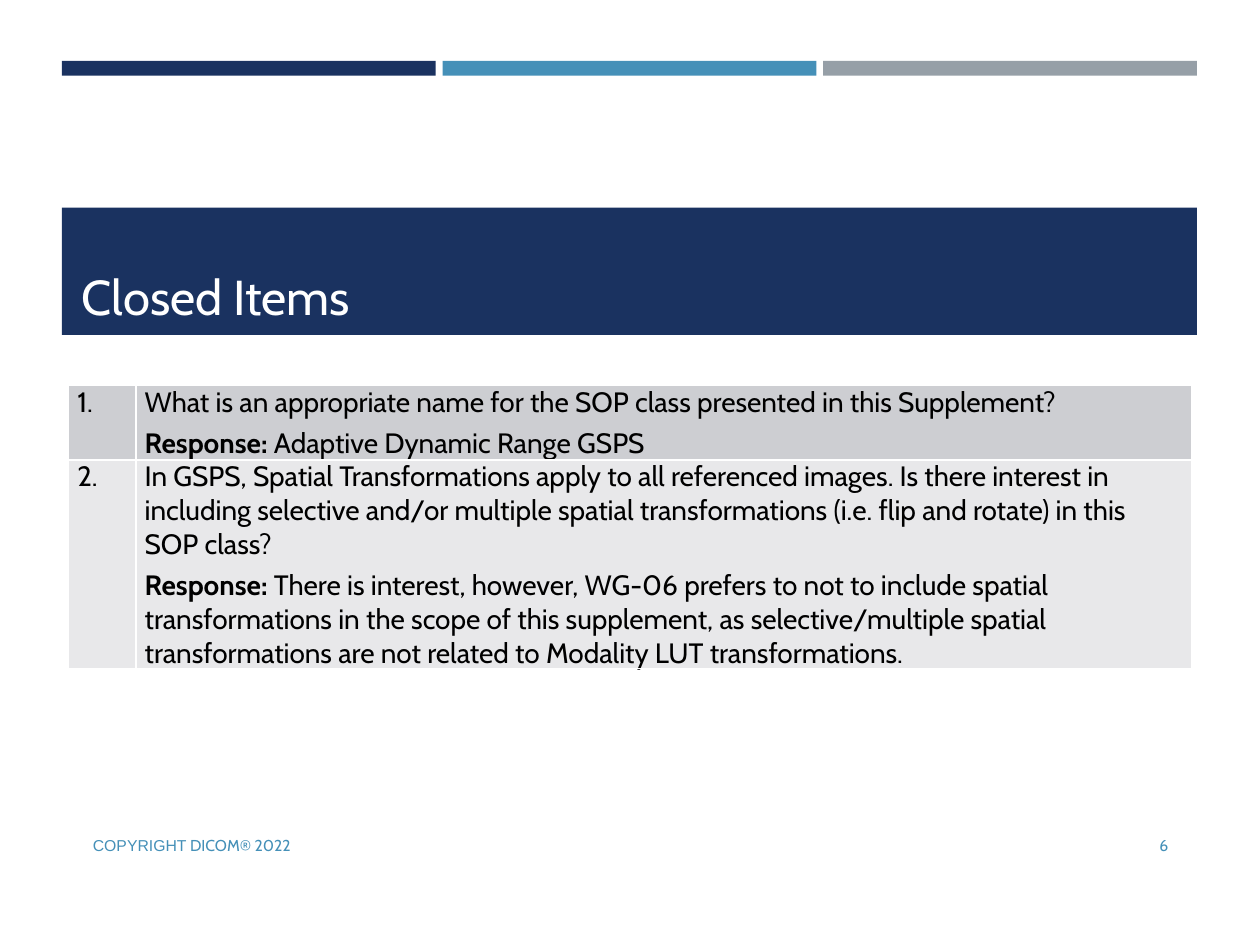
from dataclasses import dataclass

from lxml import etree
from pptx import Presentation
from pptx.dml.color import RGBColor
from pptx.enum.shapes import MSO_SHAPE
from pptx.enum.text import MSO_ANCHOR, PP_ALIGN
from pptx.oxml.ns import qn
from pptx.util import Pt

RECTANGLE = MSO_SHAPE.RECTANGLE
TOP, MIDDLE, BOTTOM = MSO_ANCHOR.TOP, MSO_ANCHOR.MIDDLE, MSO_ANCHOR.BOTTOM
LEFT, RIGHT = PP_ALIGN.LEFT, PP_ALIGN.RIGHT


@dataclass(frozen=True)
class Theme:
    navy: str = "1A3260"
    blue: str = "4590B8"
    grey: str = "969FA7"
    white: str = "FFFFFF"
    black: str = "000000"
    bands: tuple = ("CDCED2", "E8E8EA")
    font: str = "Cabin"
    footer_font: str = "Arial"
    title_size: float = 28
    body_size: float = 16
    footer_size: float = 9


THEME = Theme()


def add_span(para, text, *, size, color, font=THEME.font, bold=False):
    span = para.add_run()
    span.text = text
    span.font.name = font
    span.font.size = Pt(size)
    span.font.bold = bold
    span.font.color.rgb = RGBColor.from_string(color)


class SlideBuilder:
    def __init__(self, page, theme):
        self.page = page
        self.theme = theme

    def bar(self, left, top, width, height, color):
        shape = self.page.shapes.add_shape(
            RECTANGLE, Pt(left), Pt(top), Pt(width), Pt(height))
        shape.shadow.inherit = False
        shape.fill.solid()
        shape.fill.fore_color.rgb = RGBColor.from_string(color)
        shape.line.fill.background()

    def text(self, left, top, width, height, spans, *, anchor=MIDDLE, align=LEFT, **style):
        box = self.page.shapes.add_textbox(Pt(left), Pt(top), Pt(width), Pt(height))
        frame = box.text_frame
        frame.word_wrap = True
        frame.vertical_anchor = anchor
        para = frame.paragraphs[0]
        para.alignment = align
        for text, font in spans:
            add_span(para, text, font=font, **style)

    def border(self, cell):
        properties = cell._tc.get_or_add_tcPr()
        for index, side in enumerate(("lnL", "lnR", "lnT", "lnB")):
            line = etree.Element(qn(f"a:{side}"), w=str(Pt(1)))
            fill = etree.SubElement(line, qn("a:solidFill"))
            etree.SubElement(fill, qn("a:srgbClr"), val=self.theme.white)
            properties.insert(index, line)

    def cell(self, cell, paragraphs, fill):
        cell.margin_left = cell.margin_right = Pt(5)
        cell.margin_top = cell.margin_bottom = 0
        cell.vertical_anchor = TOP
        cell.fill.solid()
        cell.fill.fore_color.rgb = RGBColor.from_string(fill)
        self.border(cell)
        frame = cell.text_frame
        for index, spans in enumerate(paragraphs):
            para = frame.add_paragraph() if index else frame.paragraphs[0]
            para.space_before = Pt(2 if index else 0)
            para.space_after = Pt(2)
            for text, bold in spans:
                add_span(para, text, size=self.theme.body_size,
                         color=self.theme.black, bold=bold)

    def table(self, left, top, widths, row_height, rows):
        frame = self.page.shapes.add_table(
            len(rows), len(widths), Pt(left), Pt(top),
            Pt(sum(widths)), Pt(row_height * len(rows)))
        table = frame.table
        table.first_row = False
        table.horz_banding = False
        for column, width in zip(table.columns, widths):
            column.width = Pt(width)
        for index, contents in enumerate(rows):
            table.rows[index].height = Pt(row_height)
            fill = self.theme.bands[index % len(self.theme.bands)]
            for cell, paragraphs in zip(table.rows[index].cells, contents):
                self.cell(cell, paragraphs, fill)


def closed_item(number, question, label, answer):
    return (
        [[(number, False)]],
        [[(question, False)], [(label, True), (answer, False)]],
    )


ITEMS = [
    closed_item(
        "1.",
        "What is an appropriate name for the SOP class presented in this Supplement?",
        "Response: ",
        "Adaptive Dynamic Range GSPS",
    ),
    closed_item(
        "2.",
        "In GSPS, Spatial Transformations apply to all referenced images. Is there "
        "interest in including selective and/or multiple spatial transformations "
        "(i.e. flip and rotate) in this SOP class?",
        "Response:",
        " There is interest, however, WG-06 prefers to not to include spatial "
        "transformations in the scope of this supplement, as selective/multiple "
        "spatial transformations are not related to Modality LUT transformations.",
    ),
]


def main():
    deck = Presentation()
    deck.slide_width, deck.slide_height = Pt(720), Pt(540)
    page = deck.slides.add_slide(deck.slide_layouts[6])
    builder = SlideBuilder(page, THEME)

    left, width, gap = 35.4, 648.6, 3.9
    colors = (THEME.navy, THEME.blue, THEME.grey)
    bar_width = (width - gap * (len(colors) - 1)) / len(colors)
    for index, color in enumerate(colors):
        builder.bar(left + index * (bar_width + gap), 34.8, bar_width, 8.5, color)

    builder.bar(left, 118.7, width, 72.7, THEME.navy)
    builder.text(39.6, 123.8, 629.3, 65.5, [("Closed Items", THEME.font)],
                 anchor=BOTTOM, size=THEME.title_size, color=THEME.white)
    builder.table(39.2, 220.4, (38.5, 603.5), 38, ITEMS)

    footer = {"size": THEME.footer_size, "color": THEME.blue}
    builder.text(46, 468.7, 383.8, 28.8,
                 [("COPYRIGHT", THEME.footer_font), (" DICOM® 2022", THEME.font)], **footer)
    builder.text(614.2, 468.7, 60.5, 28.8, [("6", THEME.font)], align=RIGHT, **footer)

    deck.save("out.pptx")


if __name__ == "__main__":
    main()
